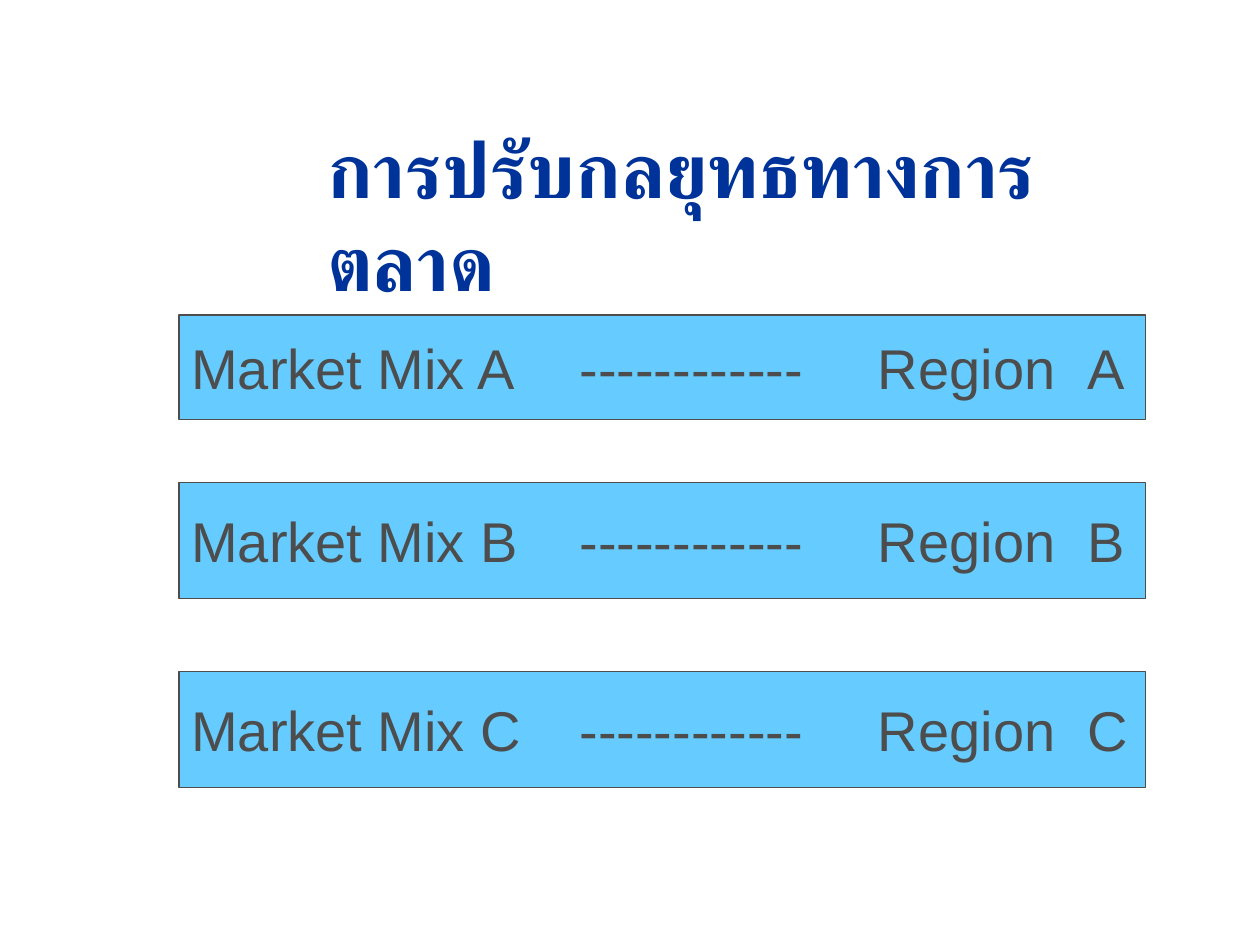
from lxml.etree import SubElement
from pptx import Presentation
from pptx.dml.color import RGBColor
from pptx.enum.shapes import MSO_SHAPE
from pptx.enum.text import MSO_ANCHOR, PP_ALIGN
from pptx.oxml.ns import qn
from pptx.util import Inches, Pt

NAVY = RGBColor(0x00, 0x33, 0x99)
SKY = RGBColor(0x66, 0xCC, 0xFF)
GREY = RGBColor(0x4D, 0x4D, 0x4D)

TITLE_FORMAT = {"name": "Arial", "size": Pt(44), "bold": True}
BAR_FORMAT = {"name": "Arial", "size": Pt(32), "bold": False}
TAB_STOPS = (3.08, 5.45, 7.11)  # dashes, region, region letter


def write_line(shape, text, formats, color, tabs=()):
    """Write one left-aligned, vertically centred line into a shape."""
    frame = shape.text_frame
    frame.word_wrap = True
    frame.vertical_anchor = MSO_ANCHOR.MIDDLE
    para = frame.paragraphs[0]
    para.alignment = PP_ALIGN.LEFT
    if tabs:
        tab_list = SubElement(para._p.get_or_add_pPr(), qn("a:tabLst"))
        for stop in tabs:
            SubElement(tab_list, qn("a:tab"), pos=str(Inches(stop)), algn="l")
    span = para.add_run()
    span.text = text
    for key, value in formats.items():
        setattr(span.font, key, value)
    span.font.color.rgb = color
    return span


def add_title(page, left, top, width, height):
    box = page.shapes.add_textbox(*map(Inches, (left, top, width, height)))
    span = write_line(box, "การปรับกลยุทธทางการตลาด", TITLE_FORMAT, NAVY)
    # Thai text takes the complex-script font
    SubElement(span.font._element, qn("a:cs"), typeface="Arial")


def add_mix_bar(page, letter, left, top, width, height):
    bar = page.shapes.add_shape(
        MSO_SHAPE.RECTANGLE, *map(Inches, (left, top, width, height)))
    bar.shadow.inherit = False
    bar.fill.solid()
    bar.fill.fore_color.rgb = SKY
    bar.line.color.rgb = GREY
    bar.line.width = Pt(0.75)
    bar.text_frame.margin_right = 0
    text = f"Market Mix {letter}\t------------\tRegion\t{letter}"
    write_line(bar, text, BAR_FORMAT, GREY, TAB_STOPS)


def main():
    deck = Presentation()
    deck.slide_width, deck.slide_height = Inches(10), Inches(7.5)
    page = deck.slides.add_slide(deck.slide_layouts[6])

    # Title
    add_title(page, 2.5, 1.42, 6.25, 0.56)

    # One bar for each market mix and its region
    for letter, top, height in (("A", 2.5, 0.83), ("B", 3.83, 0.92), ("C", 5.33, 0.92)):
        add_mix_bar(page, letter, 1.42, top, 7.67, height)

    deck.save("out.pptx")


if __name__ == "__main__":
    main()
